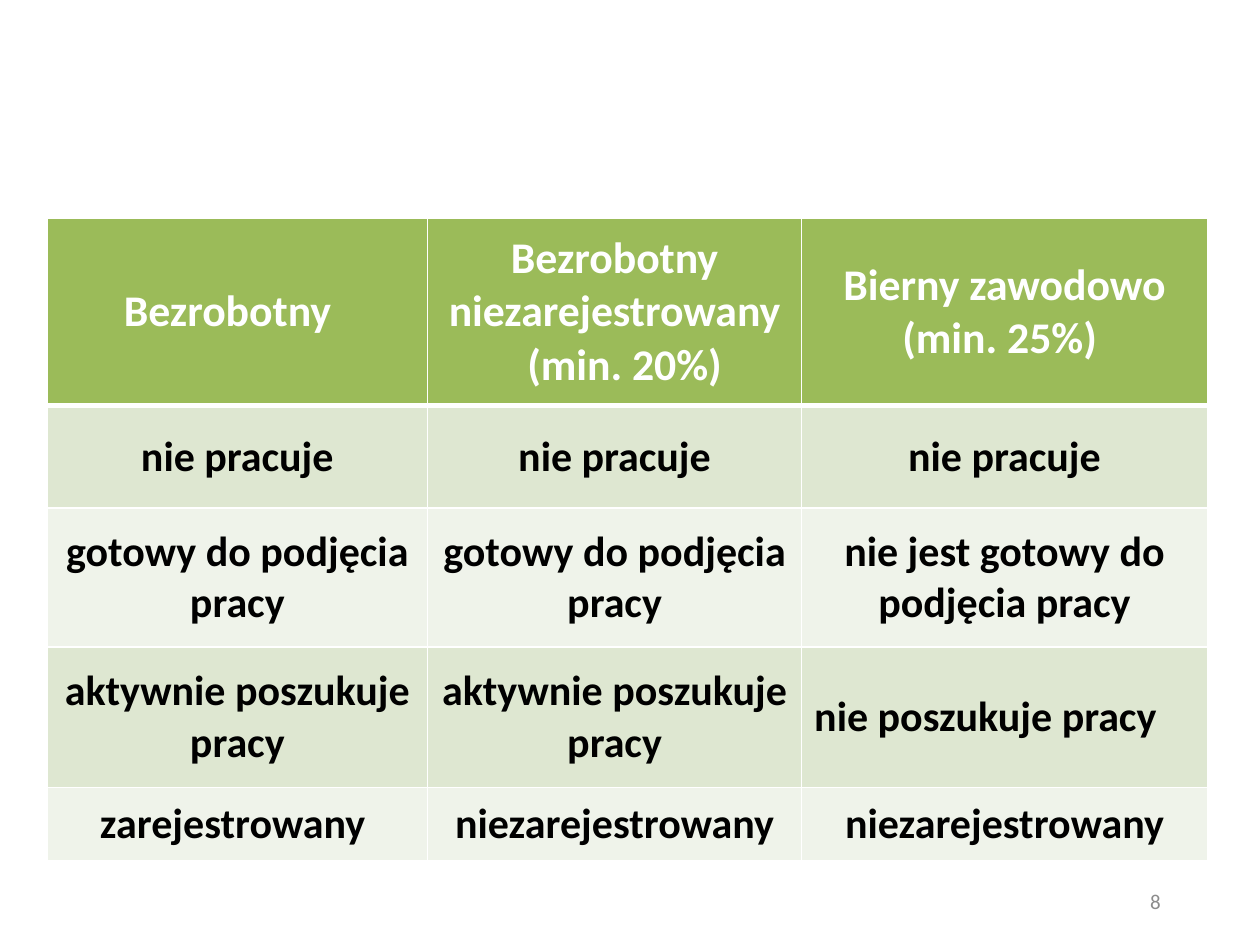
from lxml.etree import SubElement
from pptx import Presentation
from pptx.dml.color import RGBColor
from pptx.enum.text import MSO_ANCHOR, PP_ALIGN
from pptx.oxml.ns import qn
from pptx.util import Cm, Pt

WHITE = RGBColor(0xFF, 0xFF, 0xFF)
BLACK = RGBColor(0, 0, 0)
GREY = RGBColor(0x8C, 0x8C, 0x8C)
GREEN = RGBColor(0x9B, 0xBB, 0x59)
BANDS = [RGBColor(0xDE, 0xE7, 0xD1), RGBColor(0xEF, 0xF3, 0xEA)]

COL_WIDTHS = [7.67, 7.54, 8.18]
ROW_HEIGHTS = [3.78, 2.06, 2.8, 2.84, 1.47]
ROWS = [
    ["Bezrobotny", "Bezrobotny niezarejestrowany\n(min. 20%)",
     "Bierny zawodowo\n(min. 25%) "],
    ["nie pracuje"] * 3,
    ["gotowy do podjęcia pracy"] * 2 + ["nie jest gotowy do podjęcia pracy"],
    ["aktywnie poszukuje pracy"] * 2 + ["nie poszukuje pracy"],
    ["zarejestrowany ", "niezarejestrowany", "niezarejestrowany"],
]


def write(tf, text, size=24, color=BLACK, bold=True, align=PP_ALIGN.CENTER,
          after=0, font="Calibri"):
    """Fill a text frame, one paragraph per line of text."""
    tf.word_wrap = True
    for i, line in enumerate(text.split("\n")):
        p = tf.paragraphs[0] if i == 0 else tf.add_paragraph()
        p.alignment, p.space_after = align, Pt(after)
        r = p.add_run()
        r.text = line
        r.font.name, r.font.size, r.font.bold = font, Pt(size), bold
        r.font.color.rgb = color


class SlideBuilder:
    def __init__(self, s):
        self.s = s

    def borders(self, cell, **widths):
        tcPr = cell._tc.get_or_add_tcPr()
        for side in "LRTB":
            ln = SubElement(tcPr, qn(f"a:ln{side}"), w=str(Pt(widths.get(side, 1))))
            fill = SubElement(ln, qn("a:solidFill"))
            SubElement(fill, qn("a:srgbClr"), val=str(WHITE))

    def table(self, left, top, widths, heights, rows):
        table = self.s.shapes.add_table(
            len(rows), len(widths), Cm(left), Cm(top),
            Cm(sum(widths)), Cm(sum(heights))).table
        for col, width in zip(table.columns, widths):
            col.width = Cm(width)
        for i, (row, height, texts) in enumerate(zip(table.rows, heights, rows)):
            row.height = Cm(height)
            for cell, text in zip(row.cells, texts):
                cell.vertical_anchor = MSO_ANCHOR.MIDDLE
                self.borders(cell, B=3 if i == 0 else 1, T=3 if i == 1 else 1)
                cell.fill.solid()
                if i == 0:
                    cell.fill.fore_color.rgb = GREEN
                    write(cell.text_frame, text, size=25, color=WHITE)
                else:
                    cell.fill.fore_color.rgb = BANDS[(i - 1) % 2]
                    write(cell.text_frame, text, after=6)
        return table

    def page_number(self, text, left, top, width, height):
        sp = self.s.shapes.add_textbox(Cm(left), Cm(top), Cm(width), Cm(height))
        sp.text_frame.vertical_anchor = MSO_ANCHOR.MIDDLE
        write(sp.text_frame, text, size=12, color=GREY, bold=False,
              align=PP_ALIGN.RIGHT)


def main():
    prs = Presentation()
    prs.slide_width, prs.slide_height = Cm(25.4), Cm(19.05)
    slide = SlideBuilder(prs.slides.add_slide(prs.slide_layouts[6]))

    # Comparison of the three groups
    table = slide.table(0.95, 4.4, COL_WIDTHS, ROW_HEIGHTS, ROWS)

    # Cells whose text sits off centre
    table.cell(0, 0).margin_right = Cm(0.65)
    share = table.cell(0, 1).text_frame.paragraphs[1]
    share._p.get_or_add_pPr().set("marL", str(Cm(0.4)))
    table.cell(3, 2).text_frame.paragraphs[0].alignment = PP_ALIGN.LEFT

    # Slide number
    slide.page_number("8", 17.93, 17.65, 5.72, 1.02)
    prs.save("out.pptx")


if __name__ == "__main__":
    main()
